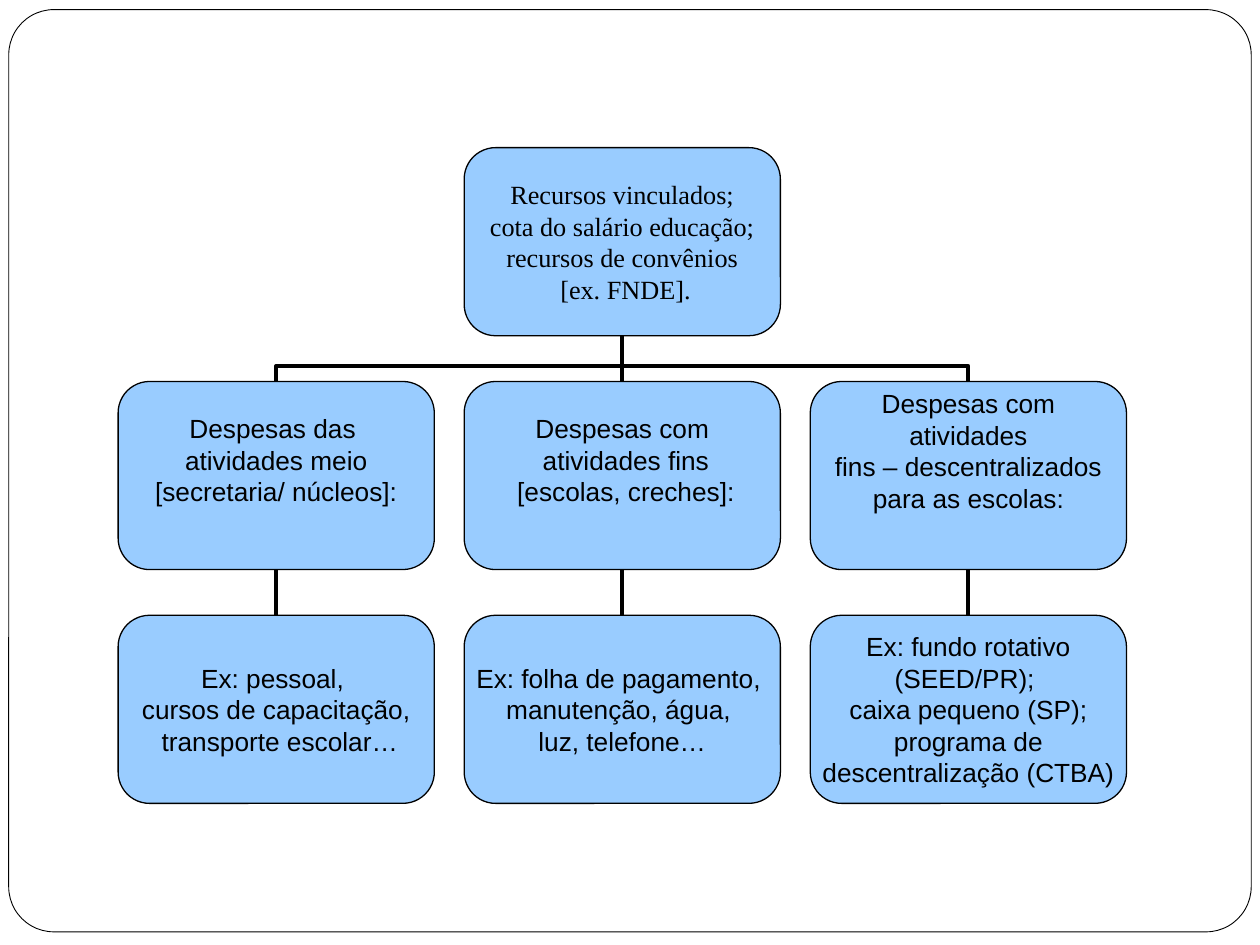
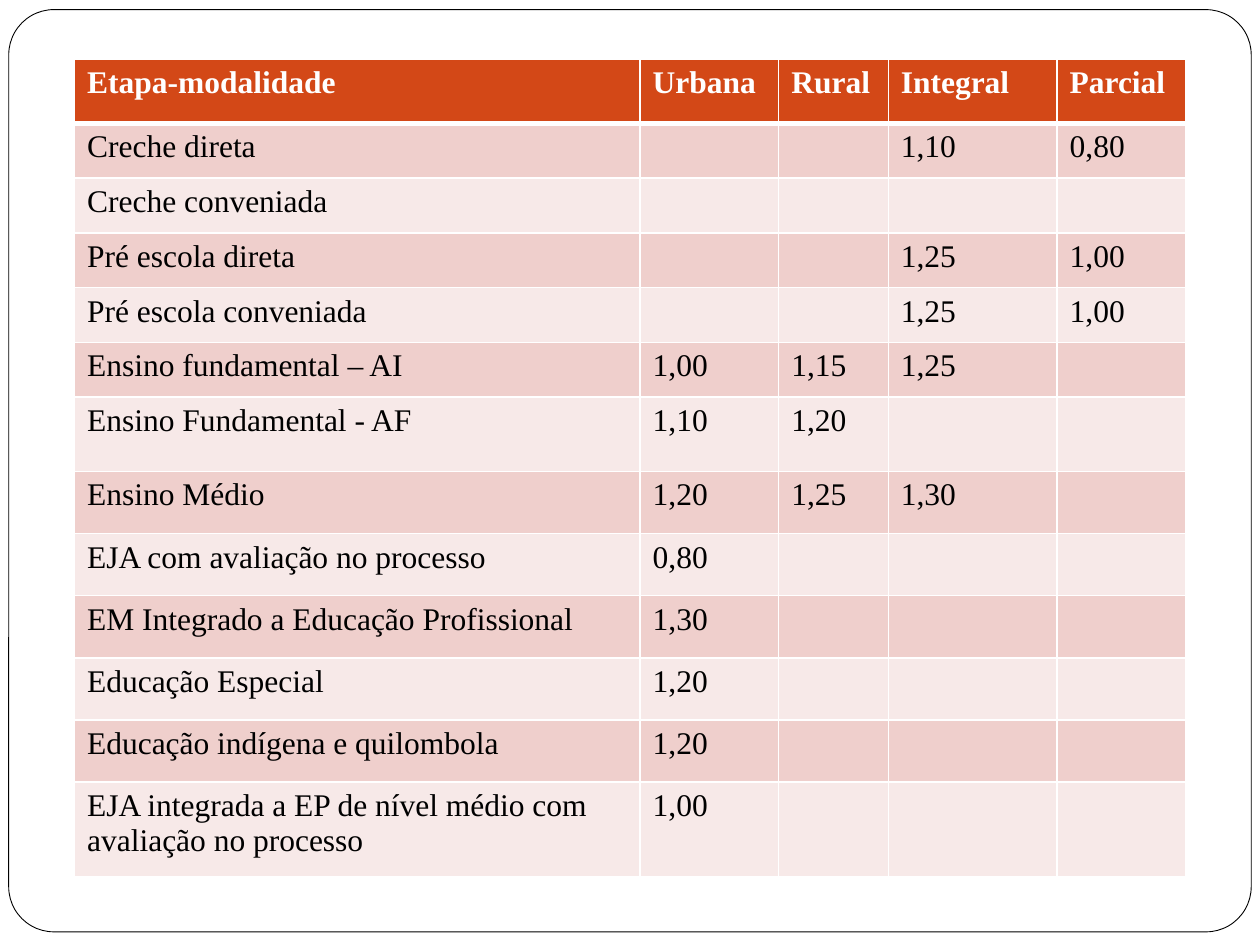
"""Build two slides on education funding: a resource tree and a weighting table."""
from dataclasses import dataclass

from lxml import etree
from pptx import Presentation
from pptx.dml.color import RGBColor
from pptx.enum.shapes import MSO_CONNECTOR, MSO_SHAPE
from pptx.enum.text import MSO_ANCHOR, PP_ALIGN
from pptx.oxml.ns import qn
from pptx.shapes.connector import Connector
from pptx.slide import Slide
from pptx.table import _Cell
from pptx.text.text import _Paragraph
from pptx.util import Pt

BLACK = RGBColor(0x00, 0x00, 0x00)
WHITE = RGBColor(0xFF, 0xFF, 0xFF)
SKY = RGBColor(0x99, 0xCC, 0xFF)
ORANGE = RGBColor(0xD3, 0x48, 0x17)
ROSE = RGBColor(0xEF, 0xCF, 0xCC)
PALE_ROSE = RGBColor(0xF7, 0xE9, 0xE8)

ROUNDED = MSO_SHAPE.ROUNDED_RECTANGLE
STRAIGHT = MSO_CONNECTOR.STRAIGHT
ELBOW = MSO_CONNECTOR.ELBOW
CENTER = PP_ALIGN.CENTER
MIDDLE = MSO_ANCHOR.MIDDLE

SANS = "Arial"
SERIF = "Times New Roman"

TREE_LEFT, TREE_TOP = 67.5, 84.4
COLUMN_PITCH, ROW_PITCH = 197.75, 133.6
BOX_WIDTH, BOX_HEIGHT = 180.7, 107.5
ELBOW_BEND = 34400


@dataclass(frozen=True)
class TreeBox:
    """A box of the tree, placed by column and row."""

    column: int
    row: int
    lines: tuple[str, ...]
    font: str = SANS
    bottom_inset: float = 0

    @property
    def left(self) -> float:
        """Left edge in points."""
        return TREE_LEFT + self.column * COLUMN_PITCH

    @property
    def top(self) -> float:
        """Top edge in points."""
        return TREE_TOP + self.row * ROW_PITCH

    @property
    def middle(self) -> float:
        """Horizontal centre in points."""
        return self.left + BOX_WIDTH / 2

    @property
    def bottom(self) -> float:
        """Bottom edge in points."""
        return self.top + BOX_HEIGHT


SOURCE = TreeBox(1, 0, ("Recursos vinculados;", " cota do salário educação; ",
                        "recursos de convênios", " [ex. FNDE]."), SERIF)
EXPENSES = (
    TreeBox(0, 1, ("Despesas das ", "atividades meio", " [secretaria/ núcleos]: "),
            bottom_inset=18),
    TreeBox(1, 1, ("Despesas com", " atividades fins", " [escolas, creches]:"),
            bottom_inset=18),
    TreeBox(2, 1, ("Despesas com atividades", " fins – descentralizados ",
                   "para as escolas:"), bottom_inset=28.8),
)
EXAMPLES = (
    TreeBox(0, 2, ("Ex: pessoal, ", "cursos de capacitação,", " transporte escolar…")),
    TreeBox(1, 2, ("Ex: folha de pagamento, ", "manutenção, água, ", "luz, telefone…")),
    TreeBox(2, 2, ("Ex: fundo rotativo (SEED/PR); ", "caixa pequeno (SP);",
                   " programa de ", "descentralização (CTBA)")),
)

COLUMN_WIDTHS = (323.2, 79.2, 62.6, 96.5, 73.4)
HEADER = ("Etapa-modalidade", "Urbana", "Rural", "Integral", "Parcial")


@dataclass(frozen=True)
class Stage:
    """A table row: a school stage with its weights."""

    name: str
    urban: str = ""
    rural: str = ""
    full_time: str = ""
    part_time: str = ""
    height: float = 35.5

    @property
    def texts(self) -> tuple[str, ...]:
        """Cell texts from left to right."""
        return self.name, self.urban, self.rural, self.full_time, self.part_time


STAGES = (
    Stage("Creche direta", full_time="1,10", part_time="0,80", height=31.3),
    Stage("Creche conveniada", height=31.3),
    Stage("Pré escola direta", full_time="1,25", part_time="1,00", height=31.3),
    Stage("Pré escola conveniada", full_time="1,25", part_time="1,00", height=31.3),
    Stage("Ensino fundamental – AI", "1,00", "1,15", "1,25", height=31.3),
    Stage("Ensino Fundamental - AF", "1,10", "1,20", height=42.5),
    Stage("Ensino Médio", "1,20", "1,25", "1,30"),
    Stage("EJA com avaliação no processo", "0,80"),
    Stage("EM Integrado a Educação Profissional", "1,30"),
    Stage("Educação Especial", "1,20"),
    Stage("Educação indígena e quilombola", "1,20"),
    Stage("EJA integrada a EP de nível médio com avaliação no processo", "1,00",
          height=54.4),
)


def add_span(para: _Paragraph, text: str, font: str, size: float,
             color: RGBColor = BLACK, bold: bool = False) -> None:
    """Add one styled run to a paragraph."""
    span = para.add_run()
    span.text = text
    span.font.name = font
    span.font.size = Pt(size)
    span.font.bold = bold
    span.font.color.rgb = color


def add_rounded(page: Slide, left: float, top: float, width: float, height: float,
                fill: RGBColor, line_width: float, corner: float):
    """Add a rounded box with a black outline."""
    box = page.shapes.add_shape(ROUNDED, Pt(left), Pt(top), Pt(width), Pt(height))
    box.adjustments[0] = corner
    box.shadow.inherit = False
    box.fill.solid()
    box.fill.fore_color.rgb = fill
    box.line.color.rgb = BLACK
    box.line.width = Pt(line_width)
    return box


def add_page(deck) -> Slide:
    """Add a blank page with the shared frame."""
    page = deck.slides.add_slide(deck.slide_layouts[6])
    add_rounded(page, 5, 5.5, 710, 527, WHITE, 0.5, 0.049)
    return page


def add_link(page: Slide, kind: MSO_CONNECTOR, x1: float, y1: float,
             x2: float, y2: float) -> Connector:
    """Add a black connector without a shadow."""
    link = page.shapes.add_connector(kind, Pt(x1), Pt(y1), Pt(x2), Pt(y2))
    link.line.color.rgb = BLACK
    link.line.width = Pt(2.25)
    etree.SubElement(link._element.spPr, qn("a:effectLst"))
    return link


def join_boxes(page: Slide, child: TreeBox, parent: TreeBox) -> None:
    """Join the top of a child to the bottom of its parent."""
    if child.column == parent.column:
        add_link(page, STRAIGHT, child.middle, child.top, parent.middle, parent.bottom)
        return
    drop = child.top - parent.bottom
    span = abs(child.middle - parent.middle)
    left = (child.middle + parent.middle - drop) / 2
    top = (child.top + parent.bottom - span) / 2
    start, end, turn = left, left + drop, 270
    if child.column > parent.column:
        start, end, turn = end, start, 90
    link = add_link(page, ELBOW, start, top, end, top + span)
    properties = link._element.spPr
    properties.find(qn("a:xfrm")).set("rot", str(turn * 60000))
    guides = properties.find(qn("a:prstGeom")).find(qn("a:avLst"))
    etree.SubElement(guides, qn("a:gd"), name="adj1", fmla=f"val {ELBOW_BEND}")


def add_tree_box(page: Slide, item: TreeBox) -> None:
    """Draw a tree box with its centred lines."""
    box = add_rounded(page, item.left, item.top, BOX_WIDTH, BOX_HEIGHT, SKY, 0.75, 0.167)
    frame = box.text_frame
    frame.word_wrap = True
    frame.vertical_anchor = MIDDLE
    frame.margin_left = frame.margin_top = frame.margin_right = Pt(0)
    frame.margin_bottom = Pt(item.bottom_inset)
    for index, line in enumerate(item.lines):
        para = frame.add_paragraph() if index else frame.paragraphs[0]
        para.alignment = CENTER
        add_span(para, line, item.font, 15)


def add_border(cell: _Cell, side: str, width: float) -> None:
    """Add a white border to one side of a cell."""
    edge = etree.SubElement(cell._tc.get_or_add_tcPr(), qn(f"a:ln{side}"),
                            w=str(int(Pt(width))))
    fill = etree.SubElement(edge, qn("a:solidFill"))
    etree.SubElement(fill, qn("a:srgbClr"), val=str(WHITE))


def fill_cell(cell: _Cell, text: str, row: int) -> None:
    """Style a cell by its row and write its text."""
    is_header = row == 0
    for side in "LRTB":
        thick = (is_header and side == "B") or (row == 1 and side == "T")
        add_border(cell, side, 3 if thick else 1)
    cell.fill.solid()
    cell.fill.fore_color.rgb = ORANGE if is_header else ROSE if row % 2 else PALE_ROSE
    if text:
        add_span(cell.text_frame.paragraphs[0], text, SERIF, 18,
                 WHITE if is_header else BLACK, is_header)


def build_tree(page: Slide) -> None:
    """Draw the resource tree, links first."""
    for expense, example in zip(EXPENSES, EXAMPLES):
        join_boxes(page, example, expense)
        join_boxes(page, expense, SOURCE)
    for item in (SOURCE, *EXPENSES, *EXAMPLES):
        add_tree_box(page, item)


def build_weights(page: Slide) -> None:
    """Draw the table of weights by stage."""
    heights = (36.5, *(stage.height for stage in STAGES))
    rows = (HEADER, *(stage.texts for stage in STAGES))
    table = page.shapes.add_table(len(rows), len(HEADER), Pt(42.6), Pt(34),
                                  Pt(sum(COLUMN_WIDTHS)), Pt(sum(heights))).table
    for column, width in zip(table.columns, COLUMN_WIDTHS):
        column.width = Pt(width)
    for index, (texts, height) in enumerate(zip(rows, heights)):
        table.rows[index].height = Pt(height)
        for column, text in enumerate(texts):
            fill_cell(table.cell(index, column), text, index)


def main() -> None:
    """Build and save the deck."""
    deck = Presentation()
    deck.slide_width, deck.slide_height = Pt(720), Pt(540)
    build_tree(add_page(deck))
    build_weights(add_page(deck))
    deck.save("out.pptx")


if __name__ == "__main__":
    main()
